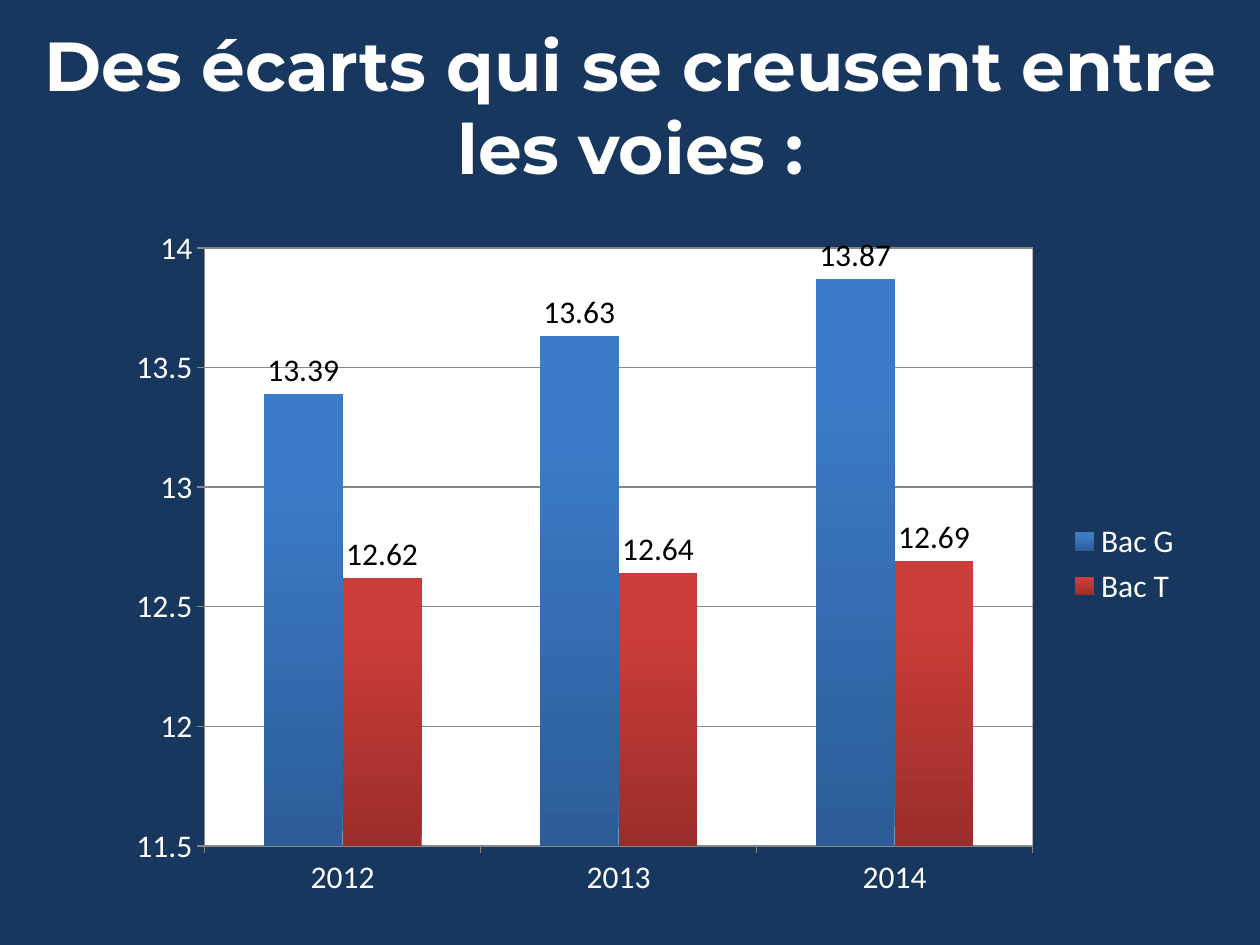
"""Build a slide with a clustered column chart comparing two series by year."""
from pptx import Presentation
from pptx.chart.data import CategoryChartData
from pptx.dml.color import RGBColor
from pptx.enum.chart import XL_CHART_TYPE as CT, XL_LABEL_POSITION as LP
from pptx.enum.chart import XL_LEGEND_POSITION as LEG, XL_TICK_MARK as TM
from pptx.enum.text import MSO_ANCHOR, PP_ALIGN
from pptx.oxml import parse_xml
from pptx.oxml.ns import nsdecls, qn
from pptx.util import Pt


def rgb(value):
    return RGBColor.from_string(value)


def set_font(font, size, color, name="Calibri"):
    font.size = Pt(size)
    font.name = name
    font.color.rgb = rgb(color)


prs = Presentation()
prs.slide_width, prs.slide_height = Pt(720), Pt(540)
s = prs.slides.add_slide(prs.slide_layouts[6])
s.background.fill.solid()
s.background.fill.fore_color.rgb = rgb("17375E")

tf = s.shapes.add_textbox(Pt(8.6), Pt(15), Pt(703.4), Pt(90)).text_frame
tf.word_wrap = True
tf.vertical_anchor = MSO_ANCHOR.MIDDLE
tf.text = "Des écarts qui se creusent entre les voies :"
p = tf.paragraphs[0]
p.alignment = PP_ALIGN.CENTER
r = p.runs[0]
set_font(r.font, 39.6, "FFFFFF", "Montserrat")
r.font.bold = True

data = CategoryChartData()
data.categories = ["2012", "2013", "2014"]
data.add_series("Bac G", [13.39, 13.63, 13.87])
data.add_series("Bac T", [12.62, 12.64, 12.69])
chart = s.shapes.add_chart(
    CT.COLUMN_CLUSTERED, Pt(57.6), Pt(126), Pt(625), Pt(392.4), data
).chart
set_font(chart.font, 18, "000000")
chart.has_title = False
chart.has_legend = True
chart.legend.position = LEG.RIGHT
chart.legend.include_in_layout = False
set_font(chart.legend.font, 18, "FFFFFF")

for axis in (chart.category_axis, chart.value_axis):
    axis.major_tick_mark = TM.OUTSIDE
    axis.minor_tick_mark = TM.NONE
    axis.format.line.color.rgb = rgb("878787")
    axis.format.line.width = Pt(0.75)
    set_font(axis.tick_labels.font, 18, "FFFFFF")

axis = chart.value_axis
axis.minimum_scale, axis.maximum_scale, axis.major_unit = 11.5, 14, 0.5
axis.has_major_gridlines = True
axis.major_gridlines.format.line.color.rgb = rgb("878787")
axis.major_gridlines.format.line.width = Pt(0.75)

plot = chart.plots[0]
plot.gap_width, plot.overlap = 150, 0
plot.vary_by_categories = False
gradients = [("2C5D98", "3C7BC7"), ("9B2D2A", "CB3D3A")]
for series, colors in zip(plot.series, gradients):
    fill = series.format.fill
    fill.gradient()
    fill.gradient_angle = 90
    for stop, color, position in zip(fill.gradient_stops, colors, (0, 0.8)):
        stop.color.rgb = rgb(color)
        stop.position = position
    labels = series.data_labels
    labels.show_value = True
    labels.position = LP.OUTSIDE_END
    set_font(labels.font, 18, "000000")

area = chart.element.find(".//" + qn("c:plotArea"))
for layout in area.findall(qn("c:layout")):
    area.remove(layout)
frame = {"x": 0.095, "y": 0.04, "w": 0.757, "h": 0.871}
bounds = "".join(f'<c:{key} val="{val}"/>' for key, val in frame.items())
area.insert(0, parse_xml(
    f'<c:layout {nsdecls("c")}><c:manualLayout><c:layoutTarget val="inner"/>'
    f'<c:xMode val="edge"/><c:yMode val="edge"/>{bounds}'
    '</c:manualLayout></c:layout>'))
area.append(parse_xml(
    f'<c:spPr {nsdecls("c", "a")}><a:solidFill><a:srgbClr val="FFFFFF"/>'
    '</a:solidFill></c:spPr>'))

prs.save("out.pptx")
